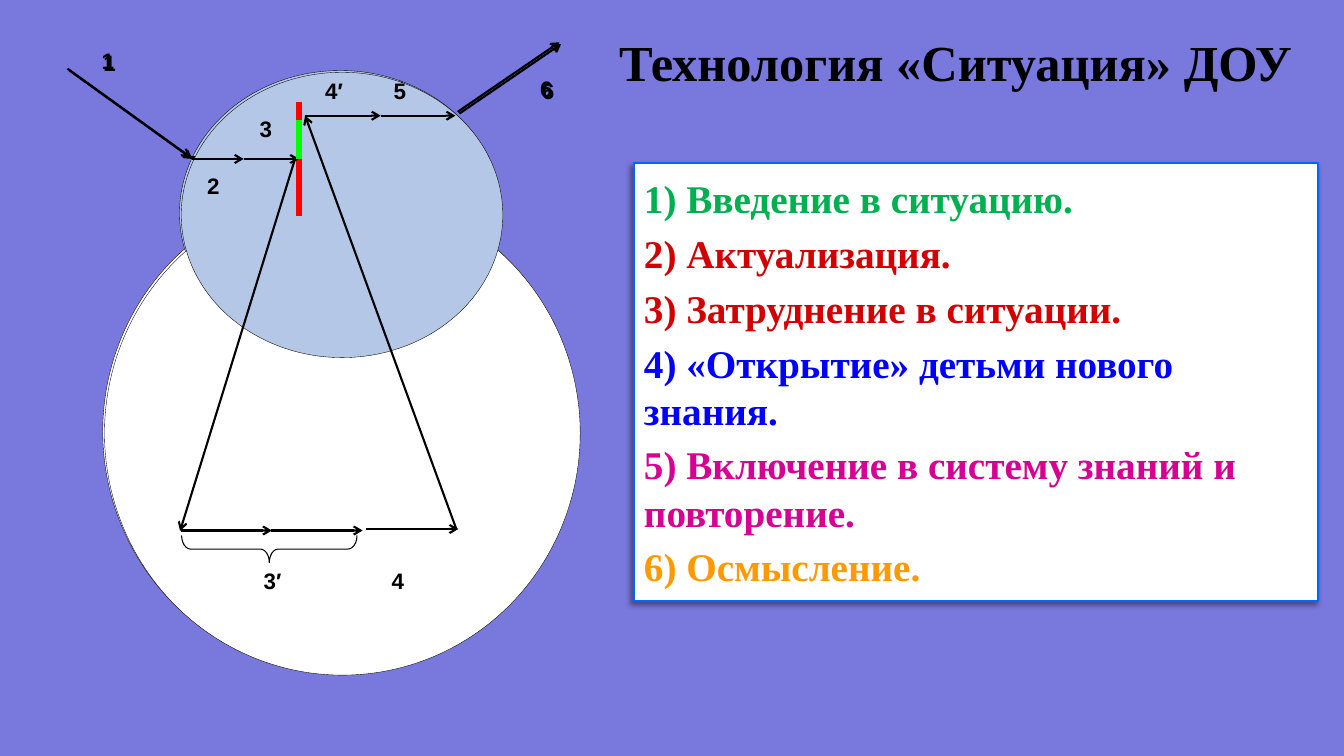
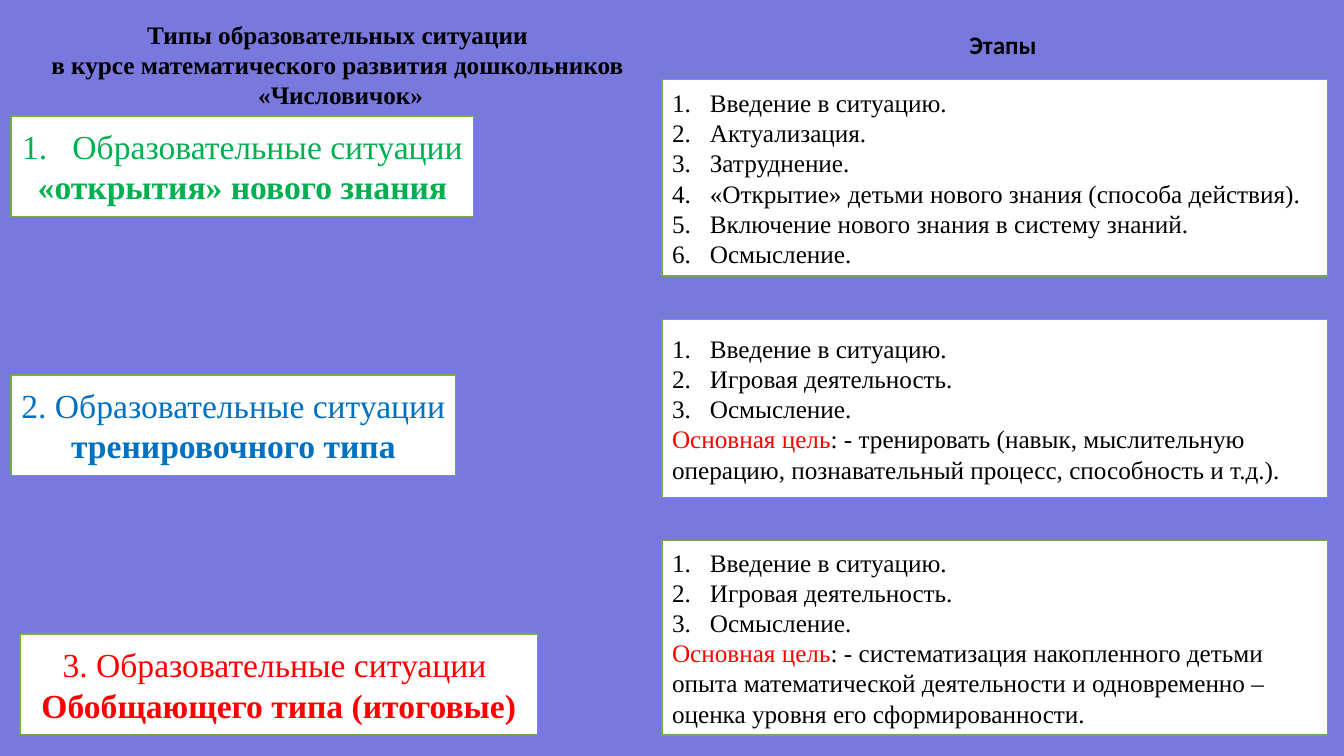
from dataclasses import dataclass
from typing import NamedTuple, Optional

from lxml import etree
from pptx import Presentation
from pptx.dml.color import RGBColor
from pptx.enum import shapes, text
from pptx.oxml import ns
from pptx.util import Pt

COLORS = {
    "back": "7878DD", "white": "FFFFFF", "black": "000000",
    "head": "B4C7E7", "panel": "0066FF", "card": "70AD47",
    "red": "FF0000", "lime": "00FF00", "green": "00B050",
    "crimson": "D20000", "blue": "0000FF", "sky": "0070C0",
    "magenta": "D60093", "orange": "FF9900",
}
SERIF, SANS, PLAIN = "Times New Roman", "Arial", "Calibri"
LEFT, CENTER = text.PP_ALIGN.LEFT, text.PP_ALIGN.CENTER
MSO = shapes.MSO_SHAPE


class Box(NamedTuple):
    left: float
    top: float
    width: float
    height: float

    def moved(self, d: float) -> "Box":
        return self._replace(left=self.left + d, top=self.top + d)


class Line(NamedTuple):
    x1: float
    y1: float
    x2: float
    y2: float
    color: str = "black"
    width: float = 1.5
    arrow: bool = True


class Label(NamedTuple):
    text: str
    box: Box


@dataclass
class Para:
    text: str
    color: str = "black"
    bold: bool = False
    indent: float = 0  # a numbered item when above zero
    lead: str = ""  # red opening words


@dataclass
class Style:
    size: float
    font: str = SERIF
    align: text.PP_ALIGN = LEFT
    after: float = 0


def rgb(name: str) -> RGBColor:
    return RGBColor.from_string(COLORS[name])


def add(parent, tag: str, **attrs):
    return etree.SubElement(parent, ns.qn(tag), {k: str(v) for k, v in attrs.items()})


# Shared drawing functions

def new_slide(prs):
    s = prs.slides.add_slide(prs.slide_layouts[6])
    s.background.fill.solid()
    s.background.fill.fore_color.rgb = rgb("back")
    return s


def write(tf, paras: list[Para], style: Style) -> None:
    for i, para in enumerate(paras):
        p = tf.add_paragraph() if i else tf.paragraphs[0]
        p.alignment = style.align
        p.space_after = Pt(style.after)
        if para.indent:
            p_pr = p._p.get_or_add_pPr()
            p_pr.set("marL", str(Pt(para.indent)))
            p_pr.set("indent", str(-Pt(para.indent)))
            add(p_pr, "a:buFont", typeface="+mj-lt")
            add(p_pr, "a:buAutoNum", type="arabicPeriod")
        p.font.name, p.font.size = style.font, Pt(style.size)
        p.font.bold = para.bold
        p.font.color.rgb = rgb(para.color)
        if para.lead:
            r = p.add_run()
            r.text = para.lead
            r.font.color.rgb = rgb("red")
        r = p.add_run()
        r.text = para.text


def add_text(s, box: Box, paras: list[Para], style: Style, wrap: bool = True) -> None:
    tf = s.shapes.add_textbox(*map(Pt, box)).text_frame
    tf.word_wrap = wrap
    write(tf, paras, style)


def add_shape(s, kind: MSO, box: Box, fill: Optional[str], line: str, width: float):
    sp = s.shapes.add_shape(kind, *map(Pt, box))
    sp.shadow.inherit = False
    if fill:
        sp.fill.solid()
        sp.fill.fore_color.rgb = rgb(fill)
    else:
        sp.fill.background()
    sp.line.color.rgb = rgb(line)
    sp.line.width = Pt(width)
    return sp


def add_card(s, box: Box, paras: list[Para], style: Style,
             line: str = "card", width: float = 1):
    sp = add_shape(s, MSO.RECTANGLE, box, "white", line, width)
    sp.text_frame.word_wrap = True
    sp.text_frame.vertical_anchor = text.MSO_ANCHOR.MIDDLE
    write(sp.text_frame, paras, style)
    return sp


def add_line(s, line: Line, d: float) -> None:
    ends = (line.x1 + d, line.y1 + d, line.x2 + d, line.y2 + d)
    c = s.shapes.add_connector(shapes.MSO_CONNECTOR.STRAIGHT, *map(Pt, ends))
    c.line.color.rgb = rgb(line.color)
    c.line.width = Pt(line.width)
    if line.arrow:
        add(c.line._get_or_add_ln(), "a:tailEnd", type="arrow")
    add(c._element.spPr, "a:effectLst")


def add_drop_shadow(sp) -> None:
    effects = sp._element.spPr.find(ns.qn("a:effectLst"))
    shadow = add(effects, "a:outerShdw", blurRad=Pt(4), dist=Pt(3),
                 dir=135 * 60000, algn="tr", rotWithShape=0)
    add(add(shadow, "a:srgbClr", val=COLORS["black"]), "a:alpha", val=40000)


# Slide 1: diagram data

TOP_Y, MID_Y, LOW_Y = 81.4, 112.3, 377.7
BODY = Box(73.4, 135.4, 339.8, 345.6)
HEAD = Box(128.2, 50.4, 229.7, 203.8)
BRACE = Box(181.4, 328.3, 19.4, 125.3)
LINES = [
    Line(212.4, 71.3, 212.4, 153.2, "red", 4.5, False),
    Line(48.2, 49, 136.1, MID_Y),
    Line(136.1, MID_Y, 172.8, MID_Y),
    Line(172.8, MID_Y, 212.4, MID_Y),
    Line(209.5, MID_Y, 127.4, 378),
    Line(128.2, LOW_Y, 193, LOW_Y),
    Line(192.2, LOW_Y, 257.8, LOW_Y),
    Line(259.9, 376.6, 326.2, 376.6),
    Line(324.7, 376.6, 216.7, TOP_Y),
    Line(216.7, TOP_Y, 270.7, TOP_Y),
    Line(270.7, TOP_Y, 324, TOP_Y),
    Line(326.9, 79.9, 399.6, 30.2),
    Line(212.4, 84.2, 212.4, MID_Y, "lime", 4.5, False),
]
LABELS = [
    Label("1", Box(65.5, 30.2, 22.3, 28.1)),
    Label("2", Box(139.7, 118.1, 16.6, 33.8)),
    Label("3", Box(177.1, 77.8, 28.1, 28.8)),
    Label("4′", Box(223.9, 50.4, 29.5, 38.9)),
    Label("5", Box(272.9, 50.4, 23.8, 28.8)),
    Label("6", Box(378.7, 50.4, 33.8, 31)),
    Label("3′", Box(180, 400.3, 29.5, 38.9)),
    Label("4", Box(271.4, 400.3, 43.2, 38.9)),
]
STEPS = [
    Para("1) Введение в ситуацию.", "green", True),
    Para("2) Актуализация.", "crimson", True),
    Para("3) Затруднение в ситуации.", "crimson", True),
    Para("4) «Открытие» детьми нового знания.", "blue", True),
    Para("5) Включение в систему знаний и повторение.", "magenta", True),
    Para("6) Осмысление.", "orange", True),
]


def draw_diagram(s, d: float) -> None:
    for box, fill in ((BODY, "white"), (HEAD, "head")):
        add_shape(s, MSO.OVAL, box.moved(d), fill, "black", 0.25)
    for line in LINES:
        add_line(s, line, d)
    for label in LABELS:
        add_text(s, label.box.moved(d), [Para(label.text, bold=True)], Style(16, SANS))
    brace = add_shape(s, MSO.RIGHT_BRACE, BRACE.moved(d), None, "black", 0.75)
    brace.rotation = 90
    brace.adjustments[0] = 0.33


def technology_slide(prs) -> None:
    s = new_slide(prs)
    add_text(s, Box(432.7, 18.7, 499.7, 51.1),
             [Para("Технология «Ситуация» ДОУ", bold=True)],
             Style(36, align=CENTER), wrap=False)
    panel = add_card(s, Box(452.9, 116.6, 488.9, 312.5), STEPS,
                     Style(28, after=5.6), "panel", 1.5)
    add_drop_shadow(panel)
    # The diagram is doubled with a slight shift
    for shift in (0, 1.25):
        draw_diagram(s, shift)


# Slide 2: situation types and their stages

class Kind(NamedTuple):
    box: Box
    color: str
    title: str
    name: str
    indent: float = 0


class Stages(NamedTuple):
    top: float
    height: float
    items: list[str]
    goal: str = ""


KINDS = [
    Kind(Box(7.9, 82.8, 330.5, 72), "green",
         "Образовательные ситуации ", "«открытия» нового знания", 36),
    Kind(Box(7.9, 267.8, 317.5, 72), "sky",
         "2. Образовательные ситуации ", "тренировочного типа"),
    Kind(Box(14.4, 452.9, 369.4, 72), "red",
         "3. Образовательные ситуации ", "Обобщающего типа (итоговые)"),
]
PLAY = ["Введение в ситуацию.", "Игровая деятельность.", "Осмысление."]
STAGES = [
    Stages(56.9, 140.4, [
        "Введение в ситуацию.", "Актуализация.", "Затруднение.",
        "«Открытие» детьми нового знания (способа действия).",
        "Включение нового знания в систему знаний.", "Осмысление."]),
    Stages(228.2, 127.4, PLAY,
           ": - тренировать (навык, мыслительную операцию, познавательный "
           "процесс, способность и т.д.)."),
    Stages(385.9, 139, PLAY,
           ": - систематизация накопленного детьми опыта математической "
           "деятельности и одновременно – оценка уровня его сформированности."),
]
HEADING = ["Типы образовательных ситуации ",
           "в курсе математического развития дошкольников ", "«Числовичок»"]


def types_slide(prs) -> None:
    s = new_slide(prs)
    add_text(s, Box(0, 10.1, 486.7, 72.7), [Para(t, bold=True) for t in HEADING],
             Style(18, align=CENTER))
    add_text(s, Box(685.4, 17.3, 63.4, 28.8), [Para("Этапы", bold=True)],
             Style(18, PLAIN), wrap=False)
    for kind in KINDS:
        add_card(s, kind.box, [Para(kind.title, kind.color, indent=kind.indent),
                               Para(kind.name, kind.color, True)],
                 Style(24, align=CENTER))
    for stages in STAGES:
        paras = [Para(item, indent=27) for item in stages.items]
        if stages.goal:
            paras.append(Para(stages.goal, lead="Основная цель"))
        add_card(s, Box(473, stages.top, 475.2, stages.height), paras, Style(18))


def main() -> None:
    prs = Presentation()
    prs.slide_width, prs.slide_height = Pt(960), Pt(540)
    technology_slide(prs)
    types_slide(prs)
    prs.save("out.pptx")


if __name__ == "__main__":
    main()
